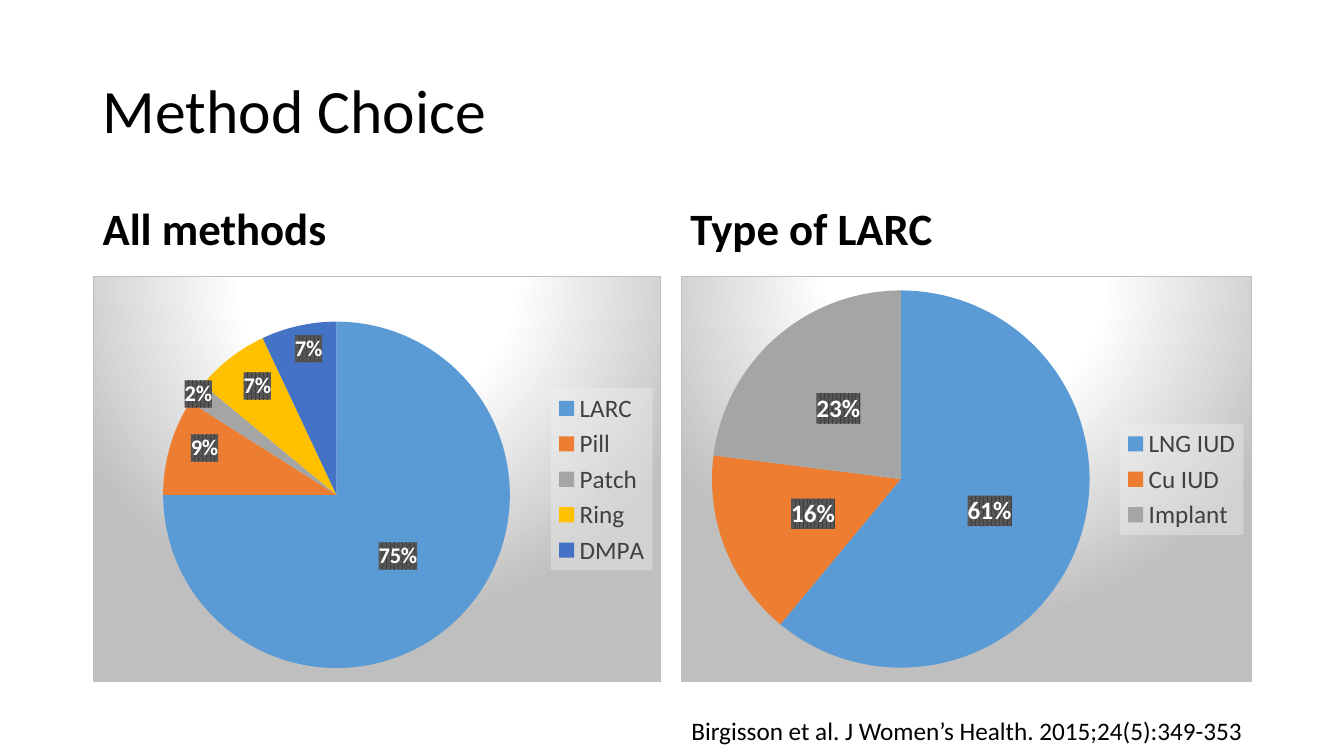
from lxml.etree import fromstring
from pptx import Presentation
from pptx.chart.data import CategoryChartData
from pptx.dml.color import RGBColor
from pptx.enum.chart import XL_CHART_TYPE, XL_LABEL_POSITION, XL_LEGEND_POSITION
from pptx.enum.text import MSO_ANCHOR, PP_ALIGN
from pptx.oxml import parse_xml
from pptx.util import Inches, Pt

NAMESPACES = (
    'xmlns:c="http://schemas.openxmlformats.org/drawingml/2006/chart" '
    'xmlns:a="http://schemas.openxmlformats.org/drawingml/2006/main"'
)
PANEL_FILL = """<a:gradFill><a:gsLst>
<a:gs pos="0"><a:srgbClr val="FFFFFF"/></a:gs>
<a:gs pos="39000"><a:srgbClr val="FFFFFF"/></a:gs>
<a:gs pos="100000"><a:srgbClr val="BFBFBF"/></a:gs></a:gsLst>
<a:path path="circle"><a:fillToRect l="50000" t="-80000" r="50000" b="180000"/></a:path>
</a:gradFill><a:ln w="9525"><a:solidFill><a:srgbClr val="BFBFBF"/></a:solidFill></a:ln>"""
LEGEND_FILL = """<a:solidFill><a:srgbClr val="F2F2F2"><a:alpha val="39000"/></a:srgbClr></a:solidFill>"""
LABEL_FILL = """<a:pattFill prst="pct75"><a:fgClr><a:srgbClr val="404040"/></a:fgClr>
<a:bgClr><a:srgbClr val="595959"/></a:bgClr></a:pattFill>"""
FILLS = [
    ("./c:txPr", PANEL_FILL),
    (".//c:legend/c:txPr", LEGEND_FILL),
    (".//c:dLbls/c:txPr", LABEL_FILL),
    (".//c:dLbl/c:txPr", LABEL_FILL),
]
SLICE_COLORS = ["5B9BD5", "ED7D31", "A5A5A5", "FFC000", "4472C4"]


def format_font(font, size, color="000000", bold=False):
    font.name = "Calibri"
    font.size = Pt(size)
    font.bold = bold
    font.color.rgb = RGBColor.from_string(color)


def write_text(shape, text, size, bold=False, align=PP_ALIGN.LEFT,
               anchor=MSO_ANCHOR.MIDDLE, line_spacing=0.9, space_before=0):
    frame = shape.text_frame
    frame.word_wrap = True
    frame.vertical_anchor = anchor
    paragraph = frame.paragraphs[0]
    paragraph.alignment = align
    paragraph.line_spacing = line_spacing
    paragraph.space_before = Pt(space_before)
    run = paragraph.add_run()
    run.text = text
    format_font(run.font, size, bold=bold)


presentation = Presentation()
presentation.slide_width = Inches(13.33)
presentation.slide_height = Inches(7.5)
slide = presentation.slides.add_slide(presentation.slide_layouts[5])

title = slide.shapes.title
title.left, title.top = Inches(0.92), Inches(0.4)
title.width, title.height = Inches(11.5), Inches(1.45)
write_text(title, "Method Choice", 44)

panels = [
    {
        "heading": "All methods", "left": 0.92, "width": 5.64, "label_size": 16,
        "shares": {"LARC": 75, "Pill": 9, "Patch": 2, "Ring": 7, "DMPA": 7},
        "pie": (0.123, 0.111, 0.611, 0.855),
        "label_shifts": {1: (-0.086, -0.056), 2: (-0.12, -0.123),
                         3: (-0.046, -0.1), 4: (-0.016, -0.152)},
    },
    {
        "heading": "Type of LARC", "left": 6.75, "width": 5.67, "label_size": 18,
        "shares": {"LNG IUD": 61, "Cu IUD": 16, "Implant": 23},
        "pie": (0.054, 0.034, 0.662, 0.931),
        "label_shifts": {},
    },
]

for panel in panels:
    left, width = Inches(panel["left"]), Inches(panel["width"])
    heading = slide.shapes.add_textbox(left, Inches(1.84), width, Inches(0.9))
    write_text(heading, panel["heading"], 32, bold=True, space_before=10)

    data = CategoryChartData()
    data.categories = list(panel["shares"])
    data.add_series("Series 1", list(panel["shares"].values()))
    chart = slide.shapes.add_chart(
        XL_CHART_TYPE.PIE, left, Inches(2.74), width, Inches(4.03), data
    ).chart
    chart.has_title = False
    format_font(chart.font, 10)
    chart.has_legend = True
    chart.legend.position = XL_LEGEND_POSITION.RIGHT
    chart.legend.include_in_layout = False
    format_font(chart.legend.font, 18, "404040")

    chart.plots[0].vary_by_categories = True
    series = chart.plots[0].series[0]
    for index, color in enumerate(SLICE_COLORS[:len(panel["shares"])]):
        fill = series.points[index].format.fill
        fill.solid()
        fill.fore_color.rgb = RGBColor.from_string(color)

    labels = series.data_labels
    labels.show_value = False
    labels.show_percentage = True
    labels.position = XL_LABEL_POSITION.CENTER
    format_font(labels.font, panel["label_size"], "FFFFFF", bold=True)
    for index, (x, y) in panel["label_shifts"].items():
        label = series.points[index].data_label
        format_font(label.font, panel["label_size"], "FFFFFF", bold=True)
        label.position = XL_LABEL_POSITION.CENTER
        label_index = chart.element.xpath(f'.//c:dLbl/c:idx[@val="{index}"]')[0]
        label_index.addnext(parse_xml(
            f'<c:layout {NAMESPACES}><c:manualLayout><c:x val="{x}"/><c:y val="{y}"/>'
            "</c:manualLayout></c:layout>"
        ))
    for name, value in (("showVal", "0"), ("showPercent", "1")):
        for flag in chart.element.xpath(f".//c:dLbl/c:{name}"):
            flag.set("val", value)

    for target, fill_xml in FILLS:
        for text_properties in chart.element.xpath(target):
            for old in text_properties.getparent().xpath("./c:spPr"):
                old.getparent().remove(old)
            text_properties.addprevious(
                parse_xml(f"<c:spPr {NAMESPACES}>{fill_xml}</c:spPr>")
            )

    x, y, pie_width, pie_height = panel["pie"]
    plot_area = chart.element.xpath(".//c:plotArea")[0]
    for old in plot_area.xpath("./c:layout"):
        plot_area.remove(old)
    plot_area.insert(0, fromstring(
        f'<c:layout {NAMESPACES}><c:manualLayout><c:layoutTarget val="inner"/>'
        f'<c:xMode val="edge"/><c:yMode val="edge"/><c:x val="{x}"/><c:y val="{y}"/>'
        f'<c:w val="{pie_width}"/><c:h val="{pie_height}"/></c:manualLayout></c:layout>'
    ))

citation = slide.shapes.add_textbox(Inches(5.23), Inches(7.05), Inches(7.19), Inches(0.4))
write_text(citation, "Birgisson et al. J Women’s Health. 2015;24(5):349-353", 18,
           align=PP_ALIGN.RIGHT, anchor=MSO_ANCHOR.TOP, line_spacing=1.0)

presentation.save("out.pptx")
